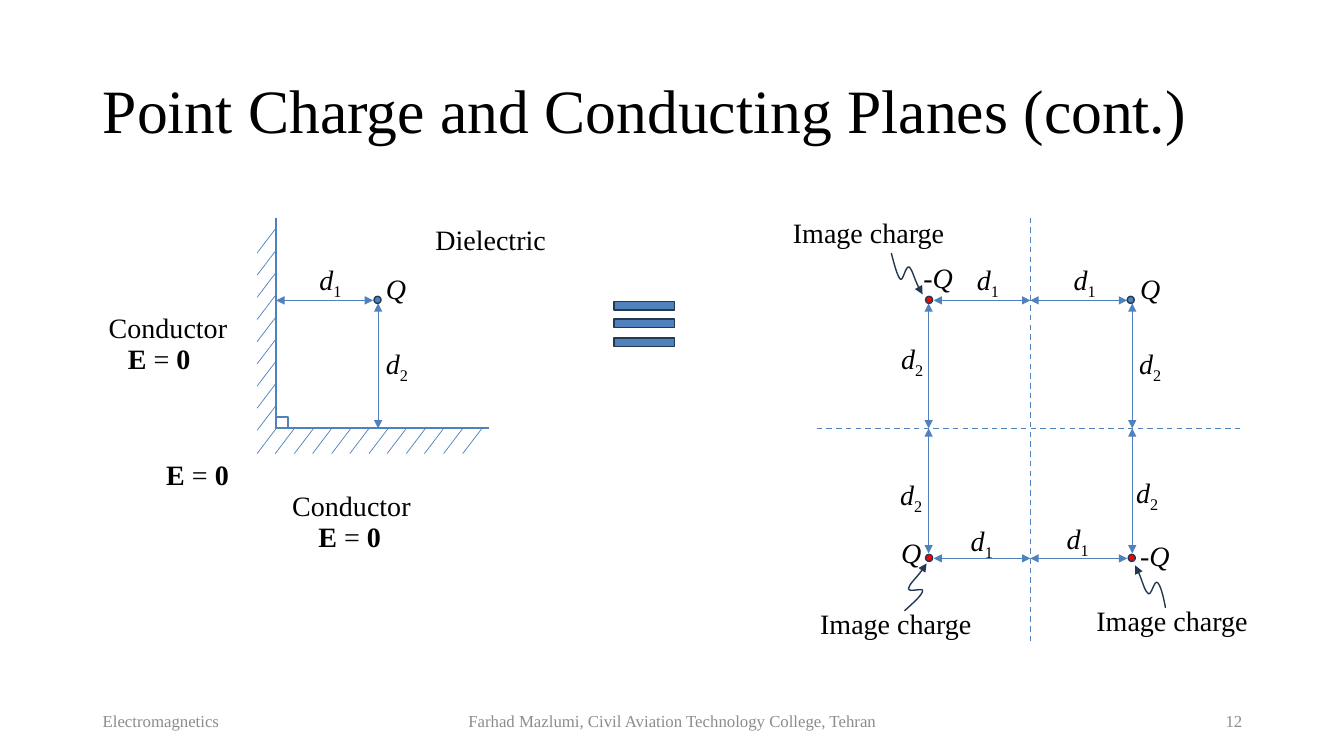
from pptx import Presentation
from pptx.dml.color import RGBColor
from pptx.enum import dml, shapes, text
from pptx.oxml.ns import qn
from pptx.util import Pt
from lxml import etree

PX = 9144  # 100 px to the inch
THEME = {
    "font": "Times New Roman",
    "black": "000000", "grey": "8C8C8C",
    "blue": "4F81BD", "navy": "233953", "red": "FF0000",
    "title": 44, "label": 20, "footer": 12,
    "thin": 0.5, "medium": 1, "thick": 1.5,
}
LEFT, CENTER, RIGHT = text.PP_ALIGN.LEFT, text.PP_ALIGN.CENTER, text.PP_ALIGN.RIGHT
MIDDLE, TOP = text.MSO_ANCHOR.MIDDLE, text.MSO_ANCHOR.TOP


def write(box, runs, size, color="black", align=LEFT, anchor=TOP, wrap=True):
    """Fill a box with runs of (text, style), style being "", "b", "i" or "sub"."""
    frame = box.text_frame
    frame.word_wrap = wrap
    frame.vertical_anchor = anchor
    para = frame.paragraphs[0]
    para.alignment = align
    for words, style in runs:
        span = para.add_run()
        span.text = words
        look = {"name": THEME["font"], "size": Pt(THEME[size]),
                "bold": style == "b", "italic": style == "i"}
        for name, value in look.items():
            setattr(span.font, name, value)
        span.font.color.rgb = RGBColor.from_string(THEME[color])
        if style == "sub":
            span.font._element.set("baseline", "-25000")
    return frame


def outline(item, color, width, dashed=False, ends=()):
    """Give an item its line, arrowheads and no shadow."""
    item.line.color.rgb = RGBColor.from_string(THEME[color])
    item.line.width = Pt(THEME[width])
    if dashed:
        item.line.dash_style = dml.MSO_LINE.DASH
    properties = item._element.spPr
    for end in ends:
        etree.SubElement(properties.find(qn("a:ln")), qn(f"a:{end}"), type="triangle")
    etree.SubElement(properties, qn("a:effectLst"))


deck = Presentation()
deck.slide_width, deck.slide_height = 1333 * PX, 750 * PX
page = deck.slides.add_slide(deck.slide_layouts[5])

# Title
title = page.shapes.title
title.left, title.top, title.width, title.height = [n * PX for n in (92, 40, 1150, 145)]
frame = write(title, [("Point Charge and Conducting Planes (cont.)", "")], "title", anchor=MIDDLE)
frame.paragraphs[0].line_spacing = 0.9

# Footer
for left, width, words, align in [
    (92, 300, "Electromagnetics", LEFT),
    (442, 450, "Farhad Mazlumi, Civil Aviation Technology College, Tehran", CENTER),
    (942, 300, "12", RIGHT),
]:
    box = page.shapes.add_textbox(left * PX, 695 * PX, width * PX, 40 * PX)
    write(box, [(words, "")], "footer", "grey", align, MIDDLE)

# Conducting walls with hatching, then the dashed mirror planes
WALL_X, FLOOR_Y, MIRROR_X = 274, 425, 1022
BOTH = ("headEnd", "tailEnd")
lines = [
    (WALL_X, 216, WALL_X, 426, "thick", False, ()),
    (275, FLOOR_Y, 485, FLOOR_Y, "thick", False, ()),
    (810, FLOOR_Y, 1230, FLOOR_Y, "medium", True, ()),
    (MIRROR_X, 216, MIRROR_X, 636, "medium", True, ()),
]
hatch_starts = [(WALL_X, 226 + 199 * i // 9) for i in range(10)]
hatch_starts += [(WALL_X + 204 * i // 11, FLOOR_Y) for i in range(1, 12)]
lines += [(x, y, x - 19, y + 25, "thin", False, ()) for x, y in hatch_starts]

# Dimension arrows: one pair on the left, four mirrored pairs on the right
spans = [(370, 298, WALL_X, 298), (375, FLOOR_Y, 375, 301)]
for y in (298, 554):
    spans += [(1118, y, MIRROR_X, y), (MIRROR_X, y, 926, y)]
for x in (921, 1123):
    spans += [(x, FLOOR_Y, x, 301), (x, 549, x, FLOOR_Y)]
lines += [(*span, "thin", False, BOTH) for span in spans]

for x1, y1, x2, y2, width, dashed, ends in lines:
    line = page.shapes.add_connector(
        shapes.MSO_CONNECTOR.STRAIGHT, x1 * PX, y1 * PX, x2 * PX, y2 * PX)
    outline(line, "blue", width, dashed, ends)

# Equivalence sign, point charges and right-angle mark
MINUS, DOT, SQUARE = (shapes.MSO_SHAPE.MATH_MINUS, shapes.MSO_SHAPE.OVAL,
                      shapes.MSO_SHAPE.RECTANGLE)
marks = [(MINUS, 598, y, 82, 35, "blue", "navy", "medium") for y in (286, 303, 322)]
marks += [(DOT, x, y, 7, 7, fill, "navy", "medium") for x, y, fill in [
    (371, 294, "blue"), (1118, 294, "blue"),
    (918, 294, "red"), (918, 550, "red"), (1119, 550, "red")]]
marks.append((SQUARE, WALL_X, 414, 12, 11, None, "blue", "thick"))
for kind, left, top, width, height, fill, color, weight in marks:
    mark = page.shapes.add_shape(kind, left * PX, top * PX, width * PX, height * PX)
    if fill:
        mark.fill.solid()
        mark.fill.fore_color.rgb = RGBColor.from_string(THEME[fill])
    else:
        mark.fill.background()
    outline(mark, color, weight)

# Wavy pointers: a start, then three Bezier segments of three points each
for start, *points in [
    [(897, 606), (906, 598), (915, 590), (915, 586), (916, 583),
     (901, 588), (901, 584), (902, 579), (911, 572), (919, 559)],
    [(1156, 603), (1154, 592), (1151, 580), (1148, 578), (1145, 575),
     (1142, 591), (1139, 589), (1135, 586), (1133, 574), (1126, 561)],
    [(884, 251), (887, 263), (890, 274), (893, 277), (896, 279),
     (898, 263), (902, 265), (905, 268), (907, 279), (915, 292)],
]:
    builder = page.shapes.build_freeform(*start, scale=PX)
    builder.add_line_segments(points, close=False)
    pointer = builder.convert_to_shape()
    pointer.fill.background()
    outline(pointer, "navy", "medium", ends=("tailEnd",))
    route = next(pointer._element.iter(qn("a:path")))
    segments = route.findall(qn("a:lnTo"))
    for i, segment in enumerate(segments):
        if i % 3 == 0:
            curve = etree.SubElement(route, qn("a:cubicBezTo"))
        curve.append(segment[0])
        route.remove(segment)

# Labels
FIELD = [("E", "b"), (" = ", ""), ("0", "b")]
D1, D2 = [[("d", "i"), (number, "sub")] for number in "12"]
CHARGE, NEGATIVE = [("Q", "i")], [("-Q", "i")]
CONDUCTOR, IMAGE = [("Conductor", "")], [("Image charge", "")]
for runs, width, places in [
    (CONDUCTOR, 139, [(98, 303), (280, 480)]),
    ([("Dielectric", "")], 130, [(422, 216)]),
    (FIELD, 83, [(117, 334), (155, 449), (306, 510)]),
    (CHARGE, 41, [(373, 264), (1121, 264), (884, 526)]),
    (NEGATIVE, 50, [(906, 254), (1121, 529)]),
    (D1, 44, [(307, 256), (959, 256), (1055, 256), (953, 514), (1048, 512)]),
    (D2, 44, [(373, 339), (884, 334), (1120, 339), (883, 469), (1117, 467)]),
    (IMAGE, 183, [(770, 209), (797, 597), (1071, 594)]),
]:
    for left, top in places:
        box = page.shapes.add_textbox(left * PX, top * PX, width * PX, 44 * PX)
        frame = write(box, runs, "label", align=CENTER if runs is IMAGE else LEFT,
                      wrap=runs is IMAGE)
        frame.auto_size = text.MSO_AUTO_SIZE.SHAPE_TO_FIT_TEXT

deck.save("out.pptx")
